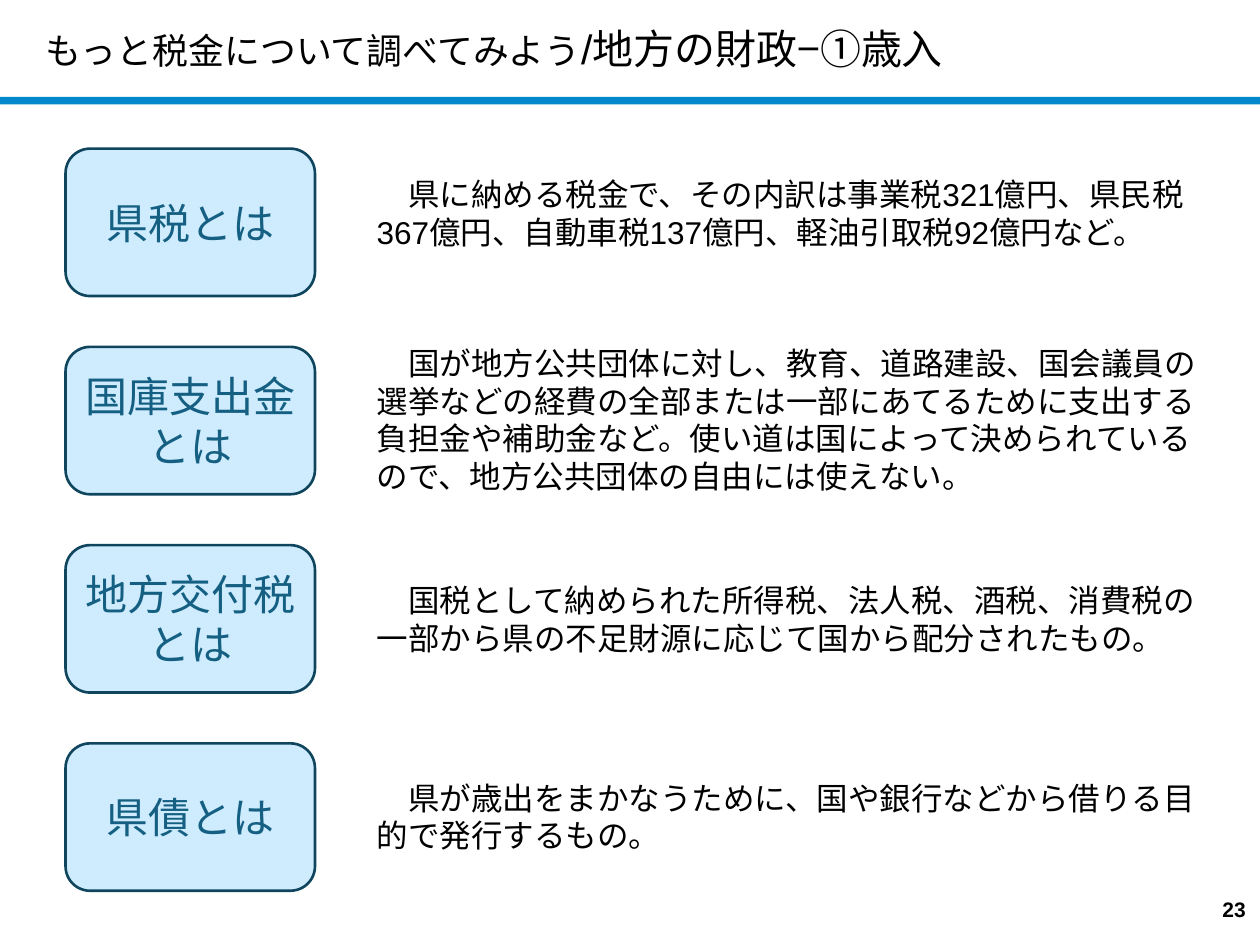
from dataclasses import dataclass

from pptx import Presentation
from pptx.dml.color import RGBColor
from pptx.enum.shapes import MSO_SHAPE
from pptx.enum.text import MSO_ANCHOR, PP_ALIGN
from pptx.shapes.autoshape import Shape
from pptx.slide import Slide
from pptx.text.text import _Paragraph as Paragraph
from pptx.util import Inches, Pt

FONT = "Arial"
COLORS = {
    "text": "000000",
    "rule": "0088CC",
    "term_fill": "CEECFE",
    "term_line": "0F465E",
    "term_text": "156082",
}
FIRST_TOP, LAST_TOP = 1.18, 5.90
TERM_LEFT, TERM_WIDTH, TERM_HEIGHT = 0.52, 1.98, 1.17
TEXT_LEFT, TEXT_WIDTH = 2.89, 6.78
FIRST_LINE_INDENT = 0.25


@dataclass
class Revenue:
    term: str
    explanation: str
    text_top: float
    text_height: float = 0.71


REVENUES = [
    Revenue("県税とは",
            "県に納める税金で、その内訳は事業税321億円、県民税367億円、"
            "自動車税137億円、軽油引取税92億円など。", 1.34),
    Revenue("国庫支出金とは",
            "国が地方公共団体に対し、教育、道路建設、国会議員の選挙などの経費の"
            "全部または一部にあてるために支出する負担金や補助金など。"
            "使い道は国によって決められているので、地方公共団体の自由には使えない。",
            2.68, 1.31),
    Revenue("地方交付税とは",
            "国税として納められた所得税、法人税、酒税、消費税の一部から"
            "県の不足財源に応じて国から配分されたもの。", 4.56),
    Revenue("県債とは",
            "県が歳出をまかなうために、国や銀行などから借りる目的で発行するもの。",
            6.13),
]


def color(name: str) -> RGBColor:
    return RGBColor.from_string(COLORS[name])


def style_paragraph(paragraph: Paragraph, size: float, color_name: str = "text") -> None:
    paragraph.font.name = FONT
    paragraph.font.size = Pt(size)
    paragraph.font.color.rgb = color(color_name)


def indent_first_line(paragraph: Paragraph, indent: float) -> None:
    properties = paragraph._p.get_or_add_pPr()
    properties.set("marL", "0")
    properties.set("indent", str(Inches(indent)))


def add_shape(page: Slide, kind: MSO_SHAPE, left: float, top: float,
              width: float, height: float, fill: str) -> Shape:
    """Add a filled shape without shadow or outline."""
    shape = page.shapes.add_shape(
        kind, Inches(left), Inches(top), Inches(width), Inches(height))
    shape.shadow.inherit = False
    shape.fill.solid()
    shape.fill.fore_color.rgb = color(fill)
    shape.line.fill.background()
    return shape


def add_text(page: Slide, text: str, left: float, top: float, width: float,
             height: float, size: float,
             anchor: MSO_ANCHOR = MSO_ANCHOR.TOP) -> Paragraph:
    """Add a wrapping text box and return its paragraph."""
    box = page.shapes.add_textbox(
        Inches(left), Inches(top), Inches(width), Inches(height))
    frame = box.text_frame
    frame.word_wrap = True
    frame.vertical_anchor = anchor
    paragraph = frame.paragraphs[0]
    paragraph.add_run().text = text
    style_paragraph(paragraph, size)
    return paragraph


def add_term(page: Slide, term: str, top: float) -> None:
    box = add_shape(page, MSO_SHAPE.ROUNDED_RECTANGLE, TERM_LEFT, top,
                    TERM_WIDTH, TERM_HEIGHT, "term_fill")
    box.line.color.rgb = color("term_line")
    box.line.width = Pt(1.5)
    frame = box.text_frame
    frame.word_wrap = True
    frame.vertical_anchor = MSO_ANCHOR.MIDDLE
    paragraph = frame.paragraphs[0]
    paragraph.text = term
    paragraph.alignment = PP_ALIGN.CENTER
    style_paragraph(paragraph, 24, "term_text")


def main() -> None:
    deck = Presentation()
    deck.slide_width, deck.slide_height = Inches(10), Inches(7.5)
    page = deck.slides.add_slide(deck.slide_layouts[6])

    add_shape(page, MSO_SHAPE.RECTANGLE, 0, 0.77, 10, 0.06, "rule")
    title = add_text(page, "もっと税金について調べてみよう", 0.26, -0.02, 8.5, 0.8,
                     20.5, MSO_ANCHOR.MIDDLE)
    topic = title.add_run()
    topic.text = "/地方の財政−①歳入"
    topic.font.size = Pt(23.4)

    pitch = (LAST_TOP - FIRST_TOP) / (len(REVENUES) - 1)
    for index, revenue in enumerate(REVENUES):
        add_term(page, revenue.term, FIRST_TOP + index * pitch)
        explanation = add_text(page, revenue.explanation, TEXT_LEFT, revenue.text_top,
                               TEXT_WIDTH, revenue.text_height, 18)
        indent_first_line(explanation, FIRST_LINE_INDENT)

    number = add_text(page, "23", 9.59, 7.05, 0.41, 0.33, 12, MSO_ANCHOR.MIDDLE)
    number.alignment = PP_ALIGN.CENTER
    number.font.bold = True

    deck.save("out.pptx")


if __name__ == "__main__":
    main()
